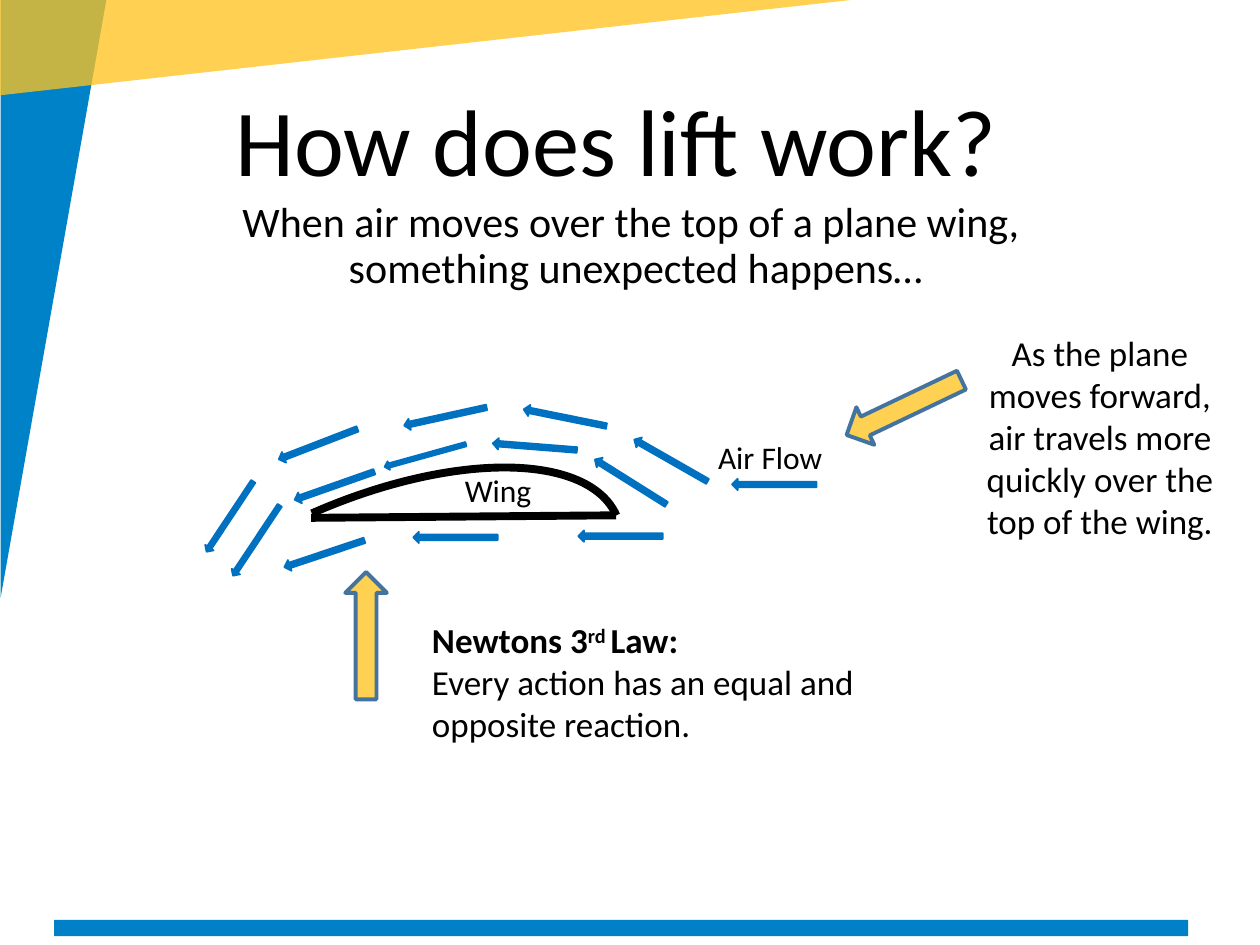
import pptx
import pptx.util
import pptx.dml.color
import pptx.enum.shapes
import pptx.enum.text
from lxml import etree

Inches, Pt = pptx.util.Inches, pptx.util.Pt
RGB = pptx.dml.color.RGBColor
KIND = pptx.enum.shapes.MSO_SHAPE
ALIGN = pptx.enum.text.PP_ALIGN
A = "{http://schemas.openxmlformats.org/drawingml/2006/main}"

COLORS = {"side": "0082C8", "top": "FFC31E", "bar": "0081C7", "air": "0070C0",
          "sign": "FFD152", "edge": "43739E", "ink": "000000"}

# Runs are (text, format); "\v" breaks a line
TITLE = [("How does lift work?", {})]
INTRO = [("When air moves over the top of a plane wing, \v"
          "something unexpected happens…", {})]
SPEED = [("As the plane moves forward, air travels more quickly "
          "over the top of the wing.", {})]
LAW = [("Newtons 3", {"bold": True}), ("rd ", {"bold": True, "sup": True}),
       ("Law: \v", {"bold": True}),
       ("Every action has an equal and opposite reaction.", {})]

TEXTS = [
    (TITLE, (1.77, 0.7, 6.92, 1.45), {"size": 54, "spacing": 0.9}),
    (INTRO, (1.02, 1.55, 8.05, 0.39), {"size": 24, "spacing": 0.9, "align": ALIGN.CENTER}),
    (SPEED, (7.7, 2.58, 2.06, 1.78), {"size": 20, "align": ALIGN.CENTER}),
    ([("Wing", {})], (3.59, 3.69, 0.89, 0.4), {"size": 18}),
    ([("Air Flow", {})], (5.6, 3.43, 1.18, 0.4), {"size": 18}),
    (LAW, (3.33, 4.86, 4.09, 1.28), {"size": 20}),
]

# Air arrows: left, top, turn, thickness
AIR_LEN = 0.67
AIR = [
    (5.81, 3.8, 0, 0.09), (4.99, 3.61, 29.7, 0.09), (4.15, 3.27, 11.4, 0.09),
    (3.2, 3.26, 347.6, 0.09), (2.19, 3.48, 338.9, 0.09), (1.49, 4.06, 303.6, 0.08),
    (4.67, 3.78, 32.1, 0.09), (3.91, 3.5, 4.5, 0.09), (3.04, 3.58, 344.5, 0.07),
    (2.32, 3.81, 340.6, 0.09), (1.7, 4.25, 303.6, 0.08),
    (4.59, 4.21, 0, 0.09), (3.28, 4.22, 0, 0.09), (2.24, 4.35, 341.5, 0.09),
]
# Callout arrows: left, top, turn
SIGNS = [(6.67, 3.07, 334.5), (2.4, 4.88, 90)]


def color(name):
    return RGB.from_string(COLORS[name])


def add_shape(slide, kind, box, fill=None, line=None, width=1, turn=0):
    shape = slide.shapes.add_shape(kind, *map(Inches, box))
    shape.shadow.inherit = False
    shape.rotation = turn
    if fill:
        shape.fill.solid()
        shape.fill.fore_color.rgb = color(fill)
    else:
        shape.fill.background()
    if line:
        shape.line.color.rgb = color(line)
        shape.line.width = Pt(width)
    else:
        shape.line.fill.background()
    return shape


def add_text(slide, runs, box, size=18, align=ALIGN.LEFT, spacing=1.0):
    frame = slide.shapes.add_textbox(*map(Inches, box)).text_frame
    frame.word_wrap = True
    para = frame.paragraphs[0]
    para.alignment = align
    para.line_spacing = spacing
    for text, look in runs:
        for i, part in enumerate(text.split("\v")):
            if i:
                para.add_line_break()
            if not part:
                continue
            run = para.add_run()
            run.text = part
            font = run.font
            font.name, font.size = "Calibri", Pt(size)
            font.bold = look.get("bold", False)
            font.color.rgb = color("ink")
            if look.get("sup"):
                run._r.get_or_add_rPr().set("baseline", "30000")


def add_frame(slide):
    """Corner triangles and the bar at the foot."""
    add_shape(slide, KIND.RIGHT_TRIANGLE, (-1.95, 1.95, 4.75, 0.84), "side", turn=90)
    top = add_shape(slide, KIND.RIGHT_TRIANGLE, (-0.21, -0.02, 7.14, 0.8), "top", turn=180)
    props = top._element.spPr
    props.find(A + "xfrm").set("flipH", "1")
    tint = props.find(f"{A}solidFill/{A}srgbClr")
    etree.SubElement(tint, A + "alpha", val="77000")
    add_shape(slide, KIND.RECTANGLE, (0.43, 7.3, 9, 0.13), "bar")


def add_wing(slide):
    ends = map(Inches, (2.47, 4.11, 4.89, 4.09))
    base = slide.shapes.add_connector(pptx.enum.shapes.MSO_CONNECTOR.STRAIGHT, *ends)
    base.line.color.rgb = color("ink")
    base.line.width = Pt(4.5)
    etree.SubElement(base._element.spPr, A + "effectLst")
    add_shape(slide, KIND.ARC, (0.67, 3.99, 4.41, 1.98), line="ink", width=4.5, turn=336.2)


def main():
    deck = pptx.Presentation()
    deck.slide_width, deck.slide_height = Inches(10), Inches(7.5)
    slide = deck.slides.add_slide(deck.slide_layouts[6])
    add_frame(slide)
    add_wing(slide)
    for left, top, turn, thick in AIR:
        add_shape(slide, KIND.LEFT_ARROW, (left, top, AIR_LEN, thick), "air", "air", turn=turn)
    for left, top, turn in SIGNS:
        add_shape(slide, KIND.LEFT_ARROW, (left, top, 1.01, 0.33), "sign", "edge", 2.25, turn)
    for runs, box, look in TEXTS:
        add_text(slide, runs, box, **look)
    deck.save("out.pptx")


if __name__ == "__main__":
    main()
